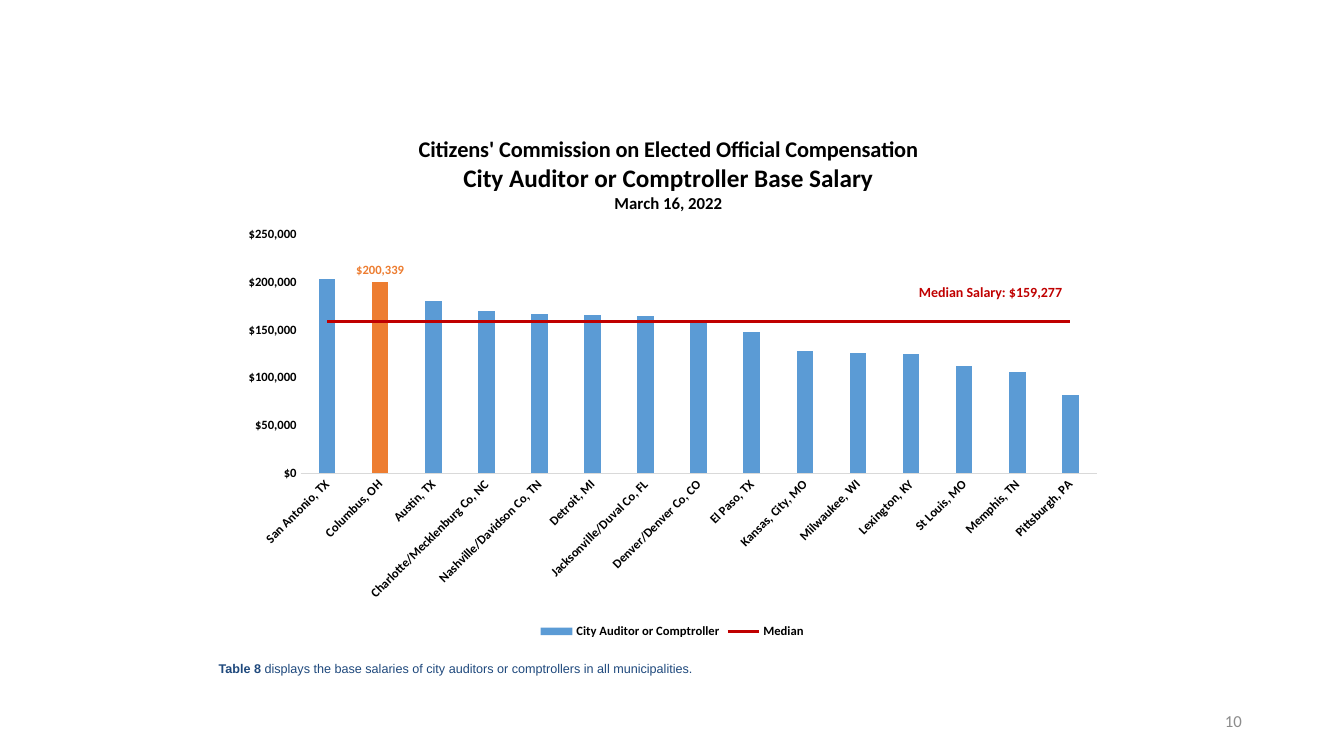
import pptx
import pptx.chart.data
import pptx.dml.color
import pptx.enum.chart
import pptx.enum.shapes
import pptx.enum.text
import pptx.oxml
import pptx.oxml.ns
import pptx.util
from dataclasses import dataclass

Cm, Pt = pptx.util.Cm, pptx.util.Pt

# Content
TITLE = [
    ("Citizens' Commission on Elected Official Compensation", 16),
    ("City Auditor or Comptroller Base Salary", 18),
    ("March 16, 2022", 12),
]
SALARIES = {
    "San Antonio, TX": 203430, "Columbus, OH": 200339, "Austin, TX": 179962,
    "Charlotte/Mecklenburg Co, NC": 170000, "Nashville/Davidson Co, TN": 167081,
    "Detroit, MI": 165289, "Jacksonville/Duval Co, FL": 164800,
    "Denver/Denver Co, CO": 159277, "El Paso, TX": 147617,
    "Kansas, City, MO": 127980, "Milwaukee, WI": 125607,
    "Lexington, KY": 124842, "St Louis, MO": 112190,
    "Memphis, TN": 105585, "Pittsburgh, PA": 82386,
}
HIGHLIGHT = "Columbus, OH"
MEDIAN_LEVEL = 159000
MEDIAN_NOTE = "Median Salary: $159,277"
CAPTION = [("Table 8 ", True),
           ("displays the base salaries of city auditors or comptrollers "
            "in all municipalities.", False)]
PAGE_NUMBER = "10"
DOLLARS = '"$"#,##0'


@dataclass(frozen=True)
class Theme:
    font: str = "Calibri"
    caption_font: str = "Arial"
    text: str = "000000"
    paper: str = "FFFFFF"
    bar: str = "5B9BD5"
    highlight: str = "ED7D31"
    median: str = "C00000"
    axis: str = "D9D9D9"
    caption: str = "1F497D"
    number: str = "8C8C8C"
    small: int = 9
    note: int = 10
    page: int = 12


T = Theme()


def rgb(code):
    return pptx.dml.color.RGBColor.from_string(code)


def style(font, size, color, bold=None, name=T.font):
    font.name, font.size, font.bold = name, Pt(size), bold
    font.color.rgb = rgb(color)


def paint(fill, color):
    fill.solid()
    fill.fore_color.rgb = rgb(color)


def add_run(p, text, *font):
    r = p.add_run()
    r.text = text
    style(r.font, *font)


def add_panel(s, box, inset):
    """White rectangle with left-aligned text at its top."""
    sp = s.shapes.add_shape(pptx.enum.shapes.MSO_SHAPE.RECTANGLE, *map(Cm, box))
    sp.shadow.inherit = False
    paint(sp.fill, T.paper)
    sp.line.fill.background()
    tf = sp.text_frame
    tf.word_wrap = True
    tf.vertical_anchor = pptx.enum.text.MSO_ANCHOR.TOP
    tf.margin_left, tf.margin_top = Cm(inset[0]), Cm(inset[1])
    tf.margin_right = tf.margin_bottom = 0
    p = tf.paragraphs[0]
    p.alignment = pptx.enum.text.PP_ALIGN.LEFT
    return p


def chart_xml(tag, body=""):
    ns = pptx.oxml.ns.nsdecls("c")
    return pptx.oxml.parse_xml(f"<c:{tag} {ns}>{body}</c:{tag}>")


def place(parent, index, **fractions):
    """Put a chart part at fractions of the chart's size."""
    for old in parent.xpath("c:layout"):
        parent.remove(old)
    target = '<c:layoutTarget val="inner"/>' if "w" in fractions else ""
    modes = '<c:xMode val="edge"/><c:yMode val="edge"/>'
    values = "".join(f'<c:{k} val="{v}"/>' for k, v in fractions.items())
    body = f"<c:manualLayout>{target}{modes}{values}</c:manualLayout>"
    parent.insert(index, chart_xml("layout", body))


def median_to_line(chart):
    """Move the second series to a line plot on the same axes."""
    bars = chart.element.xpath(".//c:barChart")[0]
    ser = bars.xpath("c:ser")[1]
    for node in ser.xpath("c:invertIfNegative"):
        ser.remove(node)
    lines = chart_xml("lineChart", '<c:grouping val="standard"/>'
                      '<c:varyColors val="0"/><c:marker val="1"/>')
    lines.insert(2, ser)
    for axis in bars.xpath("c:axId"):
        axis_id = chart_xml("axId")
        axis_id.set("val", axis.get("val"))
        lines.append(axis_id)
    bars.addnext(lines)


def add_salary_chart(s):
    xl = pptx.enum.chart
    data = pptx.chart.data.CategoryChartData(number_format=DOLLARS)
    data.categories = list(SALARIES)
    data.add_series("City Auditor or Comptroller", list(SALARIES.values()))
    data.add_series("Median", [MEDIAN_LEVEL] * len(SALARIES))
    chart = s.shapes.add_chart(xl.XL_CHART_TYPE.COLUMN_CLUSTERED, Cm(5.79), Cm(2.84),
                               Cm(22.3), Cm(13.36), data).chart
    style(chart.font, T.note, T.text)

    # Title
    chart.has_title = True
    tf = chart.chart_title.text_frame
    for i, (line, size) in enumerate(TITLE):
        p = tf.add_paragraph() if i else tf.paragraphs[0]
        add_run(p, line, size, T.text, True)
    place(chart.element.xpath("c:chart/c:title")[0], 1, x=0.21, y=0.035)

    # Axes
    for axis in (chart.category_axis, chart.value_axis):
        axis.has_major_gridlines = False
        axis.major_tick_mark = axis.minor_tick_mark = xl.XL_TICK_MARK.NONE
        style(axis.tick_labels.font, T.small, T.text, True)
    line = chart.category_axis.format.line
    line.color.rgb, line.width = rgb(T.axis), Pt(0.75)
    chart.element.xpath(".//c:catAx/c:txPr/a:bodyPr")[0].set("rot", "-2700000")
    values = chart.value_axis
    values.format.line.fill.background()
    values.minimum_scale, values.maximum_scale, values.major_unit = 0, 250000, 50000
    values.tick_labels.number_format = DOLLARS
    values.tick_labels.number_format_is_linked = False
    place(chart.element.xpath(".//c:plotArea")[0], 0, x=0.08, y=0.23, w=0.9, h=0.45)

    # Legend
    chart.has_legend = True
    chart.legend.position = xl.XL_LEGEND_POSITION.BOTTOM
    chart.legend.include_in_layout = False
    style(chart.legend.font, T.small, T.text, True)

    # Columns, one highlighted and labelled
    plot = chart.plots[0]
    plot.gap_width, plot.overlap, plot.vary_by_categories = 219, -27, False
    salaries = plot.series[0]
    paint(salaries.format.fill, T.bar)
    point = salaries.points[list(SALARIES).index(HIGHLIGHT)]
    paint(point.format.fill, T.highlight)
    style(point.data_label.font, T.small, T.highlight, True)
    point.data_label.position = xl.XL_LABEL_POSITION.OUTSIDE_END
    salaries.data_labels.show_value = False

    # Median line
    median_to_line(chart)
    median = chart.plots[1].series[0]
    median.format.line.color.rgb = rgb(T.median)
    median.format.line.width = Pt(2.25)
    median.marker.style = xl.XL_MARKER_STYLE.NONE
    median.smooth = False


def main():
    prs = pptx.Presentation()
    prs.slide_width, prs.slide_height = Cm(33.87), Cm(19.05)
    s = prs.slides.add_slide(prs.slide_layouts[6])

    # Caption
    p = add_panel(s, (5.51, 16.66, 18.36, 0.91), (0, 0))
    for text, bold in CAPTION:
        add_run(p, text, T.small, T.caption, bold, T.caption_font)

    # Page number
    tf = s.shapes.add_textbox(Cm(23.93), Cm(17.65), Cm(7.62), Cm(1.02)).text_frame
    tf.word_wrap = True
    tf.vertical_anchor = pptx.enum.text.MSO_ANCHOR.MIDDLE
    tf.paragraphs[0].alignment = pptx.enum.text.PP_ALIGN.RIGHT
    add_run(tf.paragraphs[0], PAGE_NUMBER, T.page, T.number)

    # Chart and median note
    add_salary_chart(s)
    p = add_panel(s, (22.91, 7.01, 4.27, 0.64), (0.25, 0.13))
    add_run(p, MEDIAN_NOTE, T.note, T.median, True)

    prs.save("out.pptx")


if __name__ == "__main__":
    main()
